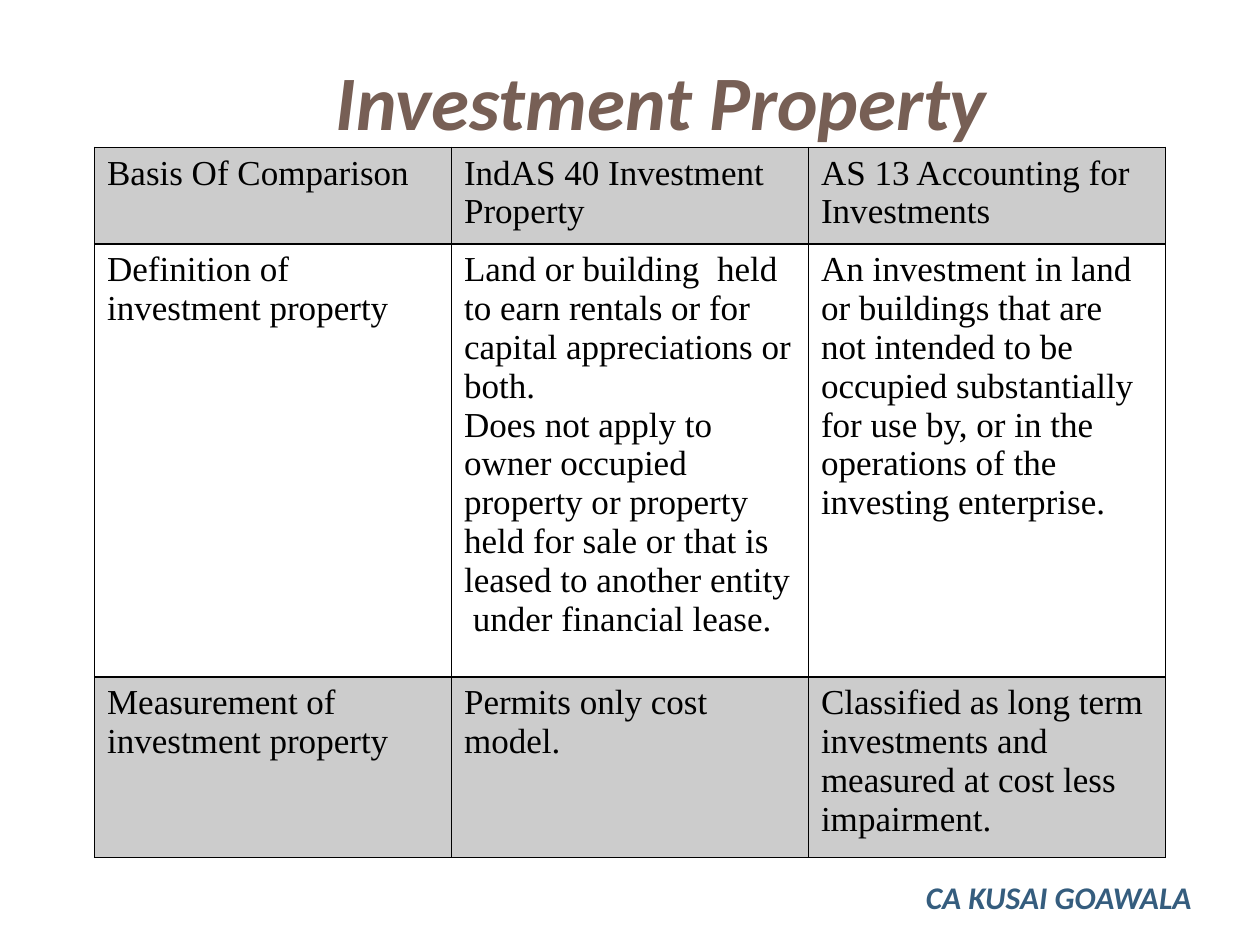
"""Build a slide that compares two accounting standards on investment property."""
from lxml.etree import SubElement
from pptx import Presentation
from pptx.dml.color import RGBColor
from pptx.enum.text import MSO_ANCHOR, PP_ALIGN
from pptx.oxml import parse_xml
from pptx.oxml.ns import nsdecls, qn
from pptx.util import Inches, Pt

BLACK = RGBColor(0x00, 0x00, 0x00)
BROWN = RGBColor(0x77, 0x5F, 0x55)
BLUE = RGBColor(0x35, 0x5D, 0x7E)

ROW_HEIGHTS = [0.72, 3.17, 1.33]
COMPARISON = [
    ["Basis Of Comparison", "IndAS 40 Investment Property",
     "AS 13 Accounting for Investments"],
    ["Definition of investment property",
     "Land or building  held to earn rentals or for capital appreciations or both.\n"
     "Does not apply to owner occupied property or property held for sale or that "
     "is leased to another entity  under financial lease.",
     "An investment in land or buildings that are not intended to be occupied "
     "substantially for use by, or in the operations of the investing enterprise."],
    ["Measurement of investment property", "Permits only cost model.",
     "Classified as long term investments and measured at cost less impairment."],
]


class SlideBuilder:
    heading_font = "Calibri"
    body_font = "Times New Roman"
    body_size = 20
    band_alpha = 20

    def __init__(self, page):
        self.page = page

    def format_text(self, frame, font, size, color, emphasis=False, align=PP_ALIGN.LEFT):
        for para in frame.paragraphs:
            para.alignment = align
            for span in para.runs:
                span.font.name = font
                span.font.size = Pt(size)
                span.font.color.rgb = color
                span.font.bold = span.font.italic = emphasis

    def heading(self, text, left, top, width, height, size, color,
                align=PP_ALIGN.LEFT, anchor=MSO_ANCHOR.TOP):
        box = self.page.shapes.add_textbox(
            Inches(left), Inches(top), Inches(width), Inches(height))
        frame = box.text_frame
        frame.word_wrap = True
        frame.vertical_anchor = anchor
        frame.text = text
        self.format_text(frame, self.heading_font, size, color, True, align)

    def cell_borders(self, cell):
        properties = cell._tc.get_or_add_tcPr()
        for position, side in enumerate(("lnL", "lnR", "lnT", "lnB")):
            properties.insert(position, parse_xml(
                f'<a:{side} {nsdecls("a")} w="{Pt(1)}"><a:solidFill>'
                f'<a:srgbClr val="{BLACK}"/></a:solidFill></a:{side}>'))

    def cell_fill(self, cell, banded):
        if not banded:
            cell.fill.background()
            return
        cell.fill.solid()
        cell.fill.fore_color.rgb = BLACK
        color = cell._tc.tcPr.find(qn("a:solidFill")).find(qn("a:srgbClr"))
        SubElement(color, qn("a:alpha")).set("val", str(self.band_alpha * 1000))

    def table(self, rows, heights, left, top, width):
        columns = len(rows[0])
        table = self.page.shapes.add_table(
            len(rows), columns, Inches(left), Inches(top),
            Inches(width), Inches(sum(heights))).table
        for column in table.columns:
            column.width = Inches(width / columns)
        for index, (texts, height) in enumerate(zip(rows, heights)):
            table.rows[index].height = Inches(height)
            for cell, text in zip(table.rows[index].cells, texts):
                cell.text_frame.text = text
                self.format_text(cell.text_frame, self.body_font, self.body_size, BLACK)
                self.cell_fill(cell, index % 2 == 0)
                self.cell_borders(cell)


def main():
    deck = Presentation()
    deck.slide_width, deck.slide_height = Inches(10), Inches(7.5)
    builder = SlideBuilder(deck.slides.add_slide(deck.slide_layouts[6]))
    builder.heading("Investment Property", 2, 0.25, 6.5, 1.08, 44, BROWN,
                    PP_ALIGN.CENTER, MSO_ANCHOR.MIDDLE)
    builder.table(COMPARISON, ROW_HEIGHTS, 0.75, 1.17, 8.5)
    builder.heading("CA KUSAI GOAWALA", 7.25, 6.92, 2.58, 0.4, 18, BLUE)
    deck.save("out.pptx")


if __name__ == "__main__":
    main()
